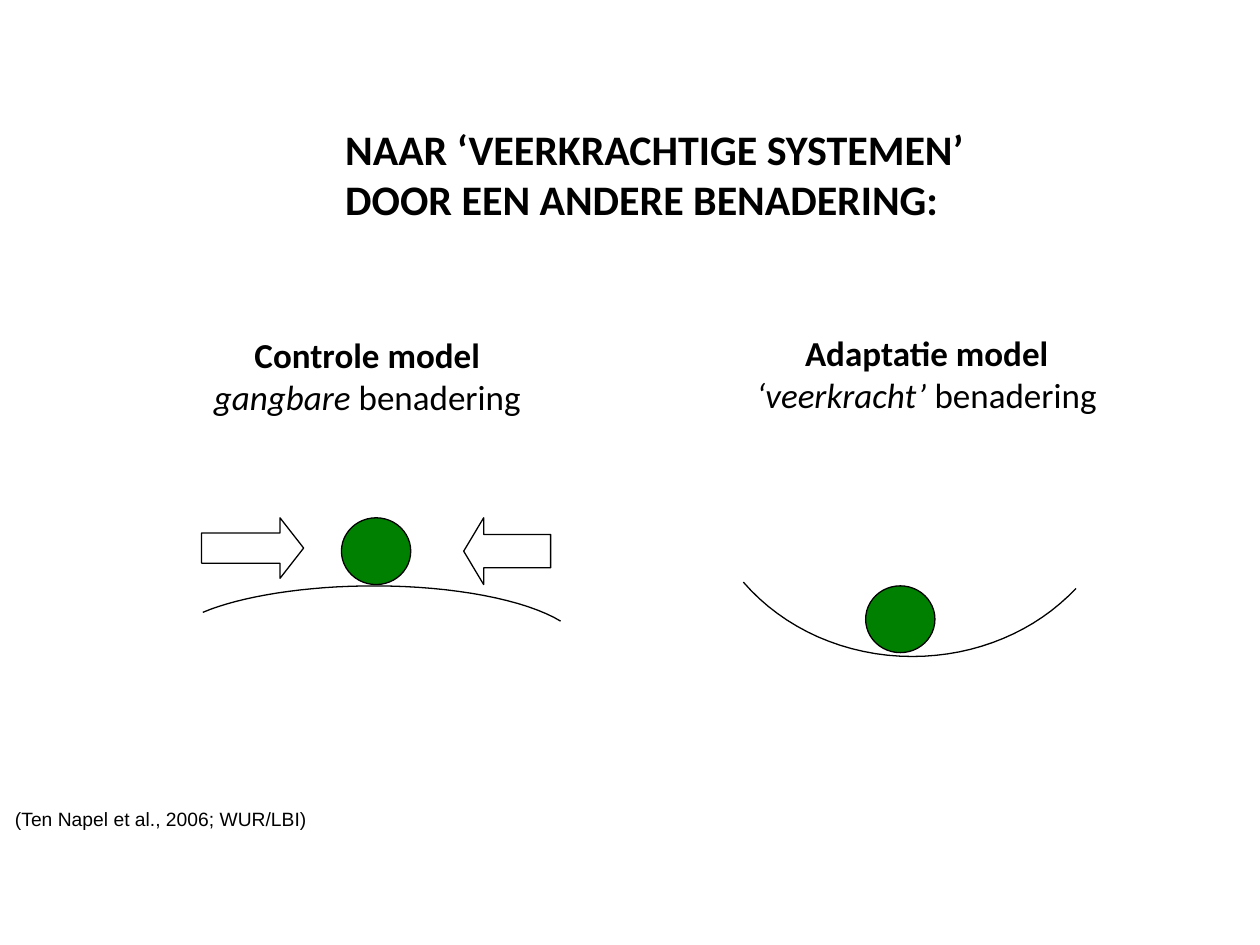
from pptx import Presentation
from pptx import util as u
from pptx.dml.color import RGBColor
from pptx.enum import shapes, text

BLACK = RGBColor(0, 0, 0)
WHITE = RGBColor(255, 255, 255)
GREEN = RGBColor(0, 128, 0)

# The page is a grid of 100 columns by 75 rows of square cells
COLUMNS, ROWS = 100, 75
CELL = u.Inches(0.1)
BALL_WIDTH, BALL_HEIGHT = 5.5, 5.3
CURVE_STEPS = 16


def cells(*counts):
    return [round(count * CELL) for count in counts]


def add_text(page, place, lines, font, size, align=text.PP_ALIGN.LEFT,
             inset=True, wrap=True):
    """Each line is a list of (wording, style) spans; style holds b and/or i."""
    box = page.shapes.add_textbox(*cells(*place))
    frame = box.text_frame
    frame.word_wrap = wrap
    if not inset:
        frame.margin_left = frame.margin_right = 0
        frame.margin_top = frame.margin_bottom = 0
    for index, spans in enumerate(lines):
        para = frame.paragraphs[0] if index == 0 else frame.add_paragraph()
        para.alignment = align
        for wording, style in spans:
            span = para.add_run()
            span.text = wording
            span.font.name = font
            span.font.size = u.Pt(size)
            span.font.color.rgb = BLACK
            span.font.bold = "b" in style
            span.font.italic = "i" in style


def outline(shape):
    shape.shadow.inherit = False
    shape.line.color.rgb = BLACK
    shape.line.width = u.Pt(0.75)


def add_solid(page, kind, place, fill, adjustments=()):
    shape = page.shapes.add_shape(kind, *cells(*place))
    for index, value in enumerate(adjustments):
        shape.adjustments[index] = value
    shape.fill.solid()
    shape.fill.fore_color.rgb = fill
    outline(shape)


def add_ball(page, left, top):
    add_solid(page, shapes.MSO_SHAPE.OVAL,
              (left, top, BALL_WIDTH, BALL_HEIGHT), GREEN)


def bezier(start, first, second, end, share):
    rest = 1 - share
    return cells(*(rest ** 3 * a + 3 * rest ** 2 * share * b
                   + 3 * rest * share ** 2 * c + share ** 3 * d
                   for a, b, c, d in zip(start, first, second, end)))


def add_curve(page, start, *segments):
    """Draw an open curve through cubic segments of (control, control, end)."""
    points = [cells(*start)]
    for segment in segments:
        points += [bezier(start, *segment, step / CURVE_STEPS)
                   for step in range(1, CURVE_STEPS + 1)]
        start = segment[-1]
    builder = page.shapes.build_freeform(*points[0])
    builder.add_line_segments(points[1:], close=False)
    curve = builder.convert_to_shape()
    curve.fill.background()
    outline(curve)


def add_model_label(page, left, top, name, stressed):
    add_text(page, (left, top, 40.1, 7.7),
             [[(name, "b")], [(stressed, "i"), (" benadering", "")]],
             "Calibri", 20, text.PP_ALIGN.CENTER)


def main():
    deck = Presentation()
    deck.slide_width, deck.slide_height = cells(COLUMNS, ROWS)
    page = deck.slides.add_slide(deck.slide_layouts[6])

    # Title and source
    add_text(page, (27.4, 9.8, COLUMNS - 27.4, 8.1),
             [[("NAAR ‘VEERKRACHTIGE SYSTEMEN’", "b")],
              [("DOOR EEN ANDERE BENADERING:", "b")]],
             "Calibri", 24, inset=False)
    add_text(page, (0.2, 63.6, 25.5, 2.9),
             [[("(Ten Napel et al., 2006; WUR/LBI)", "")]],
             "Arial", 11, wrap=False)

    # Control model: ball on a hill, held by two arrows
    add_curve(page, (16.1, 48.6),
              ((19.2, 47.3), (24.3, 46.5), (29.7, 46.5)),
              ((36, 46.5), (41.7, 47.6), (44.5, 49.3)))
    add_ball(page, 27.1, 41.1)
    add_solid(page, shapes.MSO_SHAPE.RIGHT_ARROW, (16, 41.1, 8.1, 4.8),
              WHITE, (0.5, 0.39))
    add_solid(page, shapes.MSO_SHAPE.LEFT_ARROW, (36.8, 41.1, 6.9, 5.3),
              WHITE, (0.5, 0.3))
    add_model_label(page, 9.1, 26, "Controle model", "gangbare")

    # Adaptation model: ball resting in a valley
    add_curve(page, (85.4, 46.7),
              ((82.2, 50.1), (77.5, 52.1), (72.4, 52.1)),
              ((67.1, 52.1), (62.2, 49.9), (59, 46.2)))
    add_ball(page, 68.7, 46.5)
    add_model_label(page, 53.5, 25.8, "Adaptatie model", "‘veerkracht’")

    deck.save("out.pptx")


if __name__ == "__main__":
    main()
